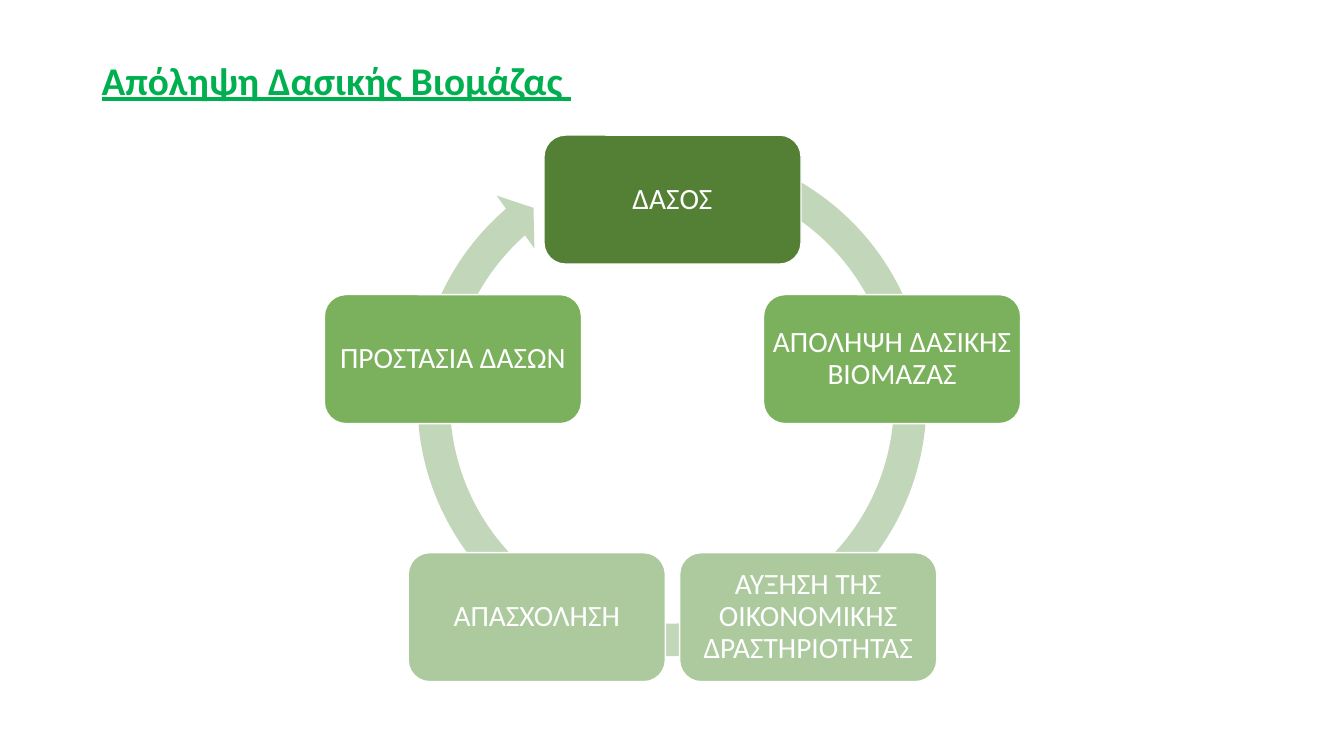
import math
import pptx
import pptx.util
import pptx.dml.color
import pptx.enum.shapes
import pptx.enum.text

Inches, Pt = pptx.util.Inches, pptx.util.Pt
SHAPES = pptx.enum.shapes.MSO_SHAPE
MIDDLE = pptx.enum.text.MSO_ANCHOR.MIDDLE

# Content
HEADING = "Απόληψη Δασικής Βιομάζας "
STAGES = [  # clockwise from the top
    ("ΔΑΣΟΣ", "dark"),
    ("ΑΠΟΛΗΨΗ ΔΑΣΙΚΗΣ ΒΙΟΜΑΖΑΣ", "medium"),
    ("ΑΥΞΗΣΗ ΤΗΣ ΟΙΚΟΝΟΜΙΚΗΣ ΔΡΑΣΤΗΡΙΟΤΗΤΑΣ", "light"),
    ("ΑΠΑΣΧΟΛΗΣΗ", "light"),
    ("ΠΡΟΣΤΑΣΙΑ ΔΑΣΩΝ", "medium"),
]
COLOURS = {"heading": "00B050", "ring": "C2D7B9", "dark": "538035",
           "medium": "7BB15D", "light": "ACCA9E", "white": "FFFFFF"}

# Cycle geometry, in inches
CENTRE_X, CENTRE_Y, RADIUS = 6.67, 4.27, 2.29
STAGE_W, STAGE_H = 2.55, 1.28
RING_LEFT, RING_TOP, RING_SIZE = 3.98, 1.3, 5.37
RING_ADJUSTMENTS = (0.06, 3.31, 137.37, 174.1, 0.06)


def colour(name):
    return pptx.dml.color.RGBColor.from_string(COLOURS[name])


def add_filled(kind, left, top, width, height, fill):
    shape = slide.shapes.add_shape(
        kind, Inches(left), Inches(top), Inches(width), Inches(height))
    shape.shadow.inherit = False
    shape.fill.solid()
    shape.fill.fore_color.rgb = colour(fill)
    return shape


def write(frame, text, size, ink):
    frame.word_wrap = True
    frame.vertical_anchor = MIDDLE
    paragraph = frame.paragraphs[0]
    paragraph.text = text
    paragraph.line_spacing = 0.9
    paragraph.font.name = "Calibri"
    paragraph.font.size = Pt(size)
    paragraph.font.color.rgb = colour(ink)
    return paragraph


deck = pptx.Presentation()
deck.slide_width, deck.slide_height = Inches(13.33), Inches(7.5)
slide = deck.slides.add_slide(deck.slide_layouts[6])

# Heading
heading = slide.shapes.add_textbox(
    Inches(0.91), Inches(0.39), Inches(11.5), Inches(0.86))
heading_line = write(heading.text_frame, HEADING, 28, "heading")
heading_line.font.bold = True
heading_line.font.underline = True

# Ring arrow behind the stages
ring = add_filled(SHAPES.CIRCULAR_ARROW, RING_LEFT, RING_TOP,
                  RING_SIZE, RING_SIZE, "ring")
ring.line.fill.background()
for index, value in enumerate(RING_ADJUSTMENTS):
    ring.adjustments[index] = value

# Stages, evenly spaced around the circle
for index, (label, fill) in enumerate(STAGES):
    angle = 2 * math.pi * index / len(STAGES)
    left = CENTRE_X + RADIUS * math.sin(angle) - STAGE_W / 2
    top = CENTRE_Y - RADIUS * math.cos(angle) - STAGE_H / 2
    stage = add_filled(SHAPES.ROUNDED_RECTANGLE, left, top,
                       STAGE_W, STAGE_H, fill)
    stage.line.color.rgb = colour("white")
    stage.line.width = Pt(1)
    frame = stage.text_frame
    frame.margin_left = frame.margin_right = Inches(0.02)
    frame.margin_top = frame.margin_bottom = Inches(0.02)
    write(frame, label, 21, "white").alignment = pptx.enum.text.PP_ALIGN.CENTER

deck.save("out.pptx")
